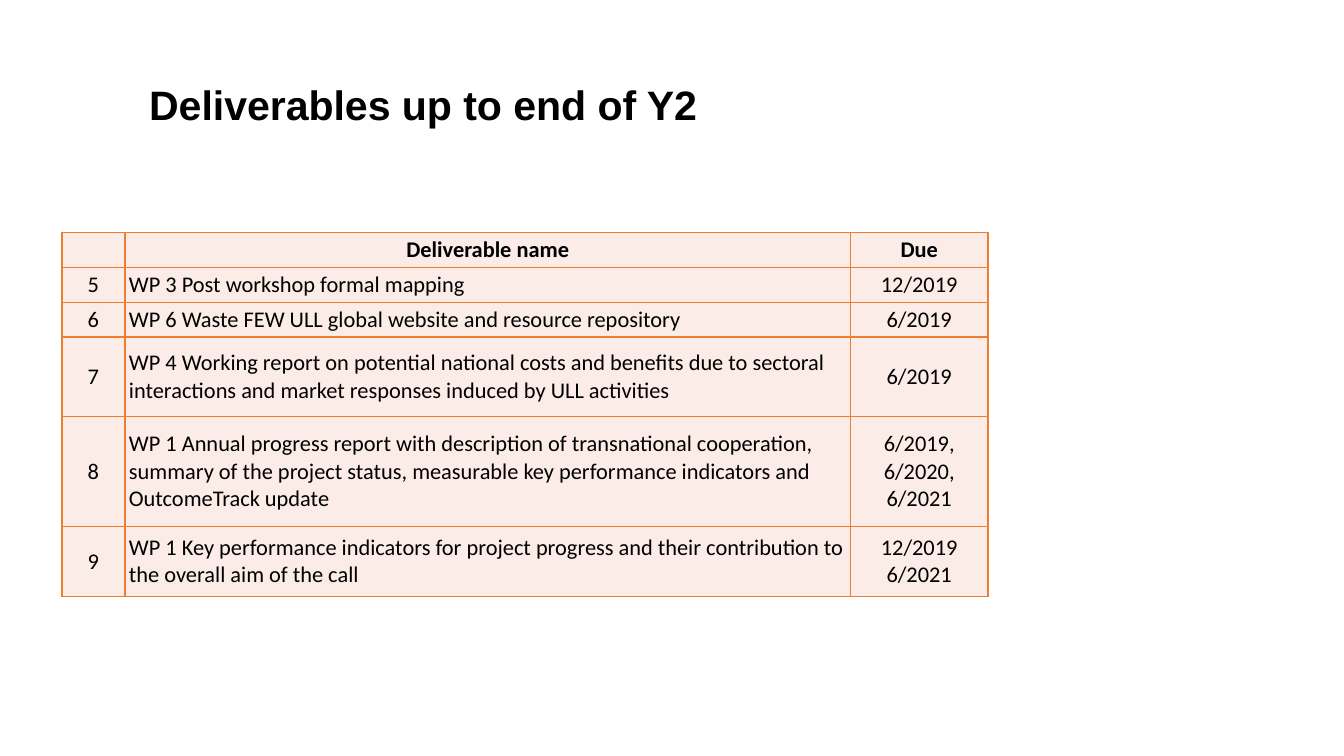
from lxml import etree
from pptx import Presentation
from pptx import util as u
from pptx.dml import color
from pptx.enum import text
from pptx.oxml import ns

COLORS = {"text": "000000", "fill": "FCECE8", "border": "ED7D31"}
COLUMN_WIDTHS = [0.47, 5.4, 1.02]
ROW_HEIGHTS = [0.26, 0.26, 0.26, 0.59, 0.82, 0.52]
ROWS = [
    ["", "Deliverable name", "Due"],
    ["5", "WP 3 Post workshop formal mapping", "12/2019"],
    ["6", "WP 6 Waste FEW ULL global website and resource repository", "6/2019"],
    ["7", "WP 4 Working report on potential national costs and benefits due to sectoral "
          "interactions and market responses induced by ULL activities", "6/2019"],
    ["8", "WP 1 Annual progress report with description of transnational cooperation,\n"
          "summary of the project status, measurable key performance indicators and "
          "OutcomeTrack update", "6/2019, 6/2020, 6/2021"],
    ["9", "WP 1 Key performance indicators for project progress and their contribution to "
          "the overall aim of the call", "12/2019 6/2021"],
]


def style_font(font, name, size, bold):
    font.name = name
    font.size = u.Pt(size)
    font.bold = bold
    font.color.rgb = color.RGBColor.from_string(COLORS["text"])


def add_borders(cell):
    properties = cell._tc.get_or_add_tcPr()
    for position, side in enumerate(["lnL", "lnR", "lnT", "lnB"]):
        line = etree.Element(ns.qn(f"a:{side}"), w=str(u.Pt(1)))
        fill = etree.SubElement(line, ns.qn("a:solidFill"))
        etree.SubElement(fill, ns.qn("a:srgbClr"), val=COLORS["border"])
        properties.insert(position, line)


presentation = Presentation()
presentation.slide_width = u.Inches(10)
presentation.slide_height = u.Inches(10 * 9 / 16)
slide = presentation.slides.add_slide(presentation.slide_layouts[5])

title = slide.shapes.title
title.left, title.top = u.Inches(1.01), u.Inches(0.25)
title.width, title.height = u.Inches(5.06), u.Inches(1.1)
title.text_frame.text = "Deliverables up to end of Y2"
title.text_frame.vertical_anchor = text.MSO_ANCHOR.MIDDLE
paragraph = title.text_frame.paragraphs[0]
paragraph.alignment = text.PP_ALIGN.LEFT
paragraph.line_spacing = 0.9
style_font(paragraph.font, "Arial", 22, True)

table = slide.shapes.add_table(
    len(ROWS), len(COLUMN_WIDTHS), u.Inches(0.46), u.Inches(1.73),
    u.Inches(sum(COLUMN_WIDTHS)), u.Inches(sum(ROW_HEIGHTS))).table
table.horz_banding = False
for column, width in zip(table.columns, COLUMN_WIDTHS):
    column.width = u.Inches(width)

for row_index, (values, height) in enumerate(zip(ROWS, ROW_HEIGHTS)):
    table.rows[row_index].height = u.Inches(height)
    for column_index, value in enumerate(values):
        is_header = row_index == 0
        is_description = column_index == 1 and not is_header
        cell = table.cell(row_index, column_index)
        cell.text = value
        cell.vertical_anchor = text.MSO_ANCHOR.MIDDLE
        cell.margin_left = u.Inches(0.03 if is_description else 0)
        cell.margin_right = cell.margin_top = cell.margin_bottom = 0
        cell.fill.solid()
        cell.fill.fore_color.rgb = color.RGBColor.from_string(COLORS["fill"])
        add_borders(cell)
        for paragraph in cell.text_frame.paragraphs:
            paragraph.alignment = text.PP_ALIGN.LEFT if is_description else text.PP_ALIGN.CENTER
            style_font(paragraph.font, "Calibri", 12, is_header)

presentation.save("out.pptx")
